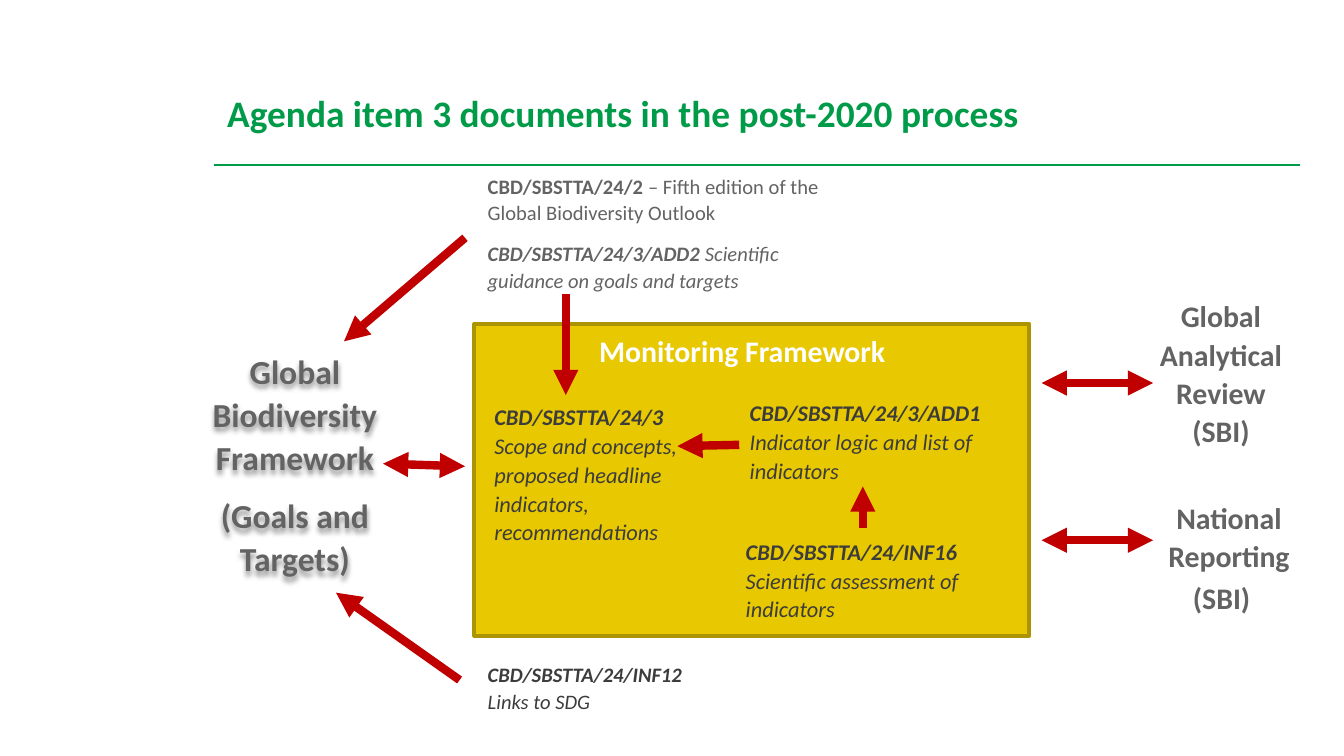
from lxml.etree import SubElement as Sub
from pptx import Presentation
from pptx.dml.color import RGBColor as Rgb
from pptx.enum.shapes import MSO_CONNECTOR as Conn, MSO_SHAPE as Shape
from pptx.enum.text import MSO_ANCHOR as Anchor, PP_ALIGN as Align
from pptx.oxml.ns import qn
from pptx.util import Inches, Pt

HUE = {
    "green": "009B48", "grey": "636363", "dark": "3C3C3C", "white": "FFFFFF",
    "gold": "E8C800", "edge": "AC9400", "red": "C00000", "black": "000000",
}
MID = Anchor.MIDDLE


def rgb(name):
    return Rgb.from_string(HUE[name])


def inch(*nums):
    return [Inches(n) for n in nums]


def shade(area):
    """Give the text of an unfilled box a soft drop shadow."""
    fx = Sub(area._element.spPr, qn("a:effectLst"))
    drop = Sub(fx, qn("a:outerShdw"), blurRad="38100", dist="25400",
               dir="5400000", algn="t", rotWithShape="0")
    tint = Sub(drop, qn("a:srgbClr"), val=HUE["black"])
    Sub(tint, qn("a:alpha"), val="43000")


def write(frame, paras, size=12, hue="dark", align=Align.LEFT, anchor=Anchor.TOP,
          after=0, lead=1.07):
    """Fill a frame; a paragraph is a list of (text, style), style using b and i."""
    frame.word_wrap = True
    frame.vertical_anchor = anchor
    for n, runs in enumerate(paras):
        para = frame.paragraphs[0] if n == 0 else frame.add_paragraph()
        para.alignment, para.line_spacing = align, lead
        para.space_before, para.space_after = Pt(0), Pt(after)
        for words, style in runs:
            run = para.add_run()
            run.text = words
            font = run.font
            font.name, font.size = "Calibri", Pt(size)
            font.bold, font.italic = "b" in style, "i" in style
            font.color.rgb = rgb(hue)


def label(slide, x, y, w, h, paras, **form):
    area = slide.shapes.add_textbox(*inch(x, y, w, h))
    write(area.text_frame, paras, **form)
    return area


def line(slide, start, end, hue="red", width=4.5, tips=("tailEnd",)):
    link = slide.shapes.add_connector(Conn.STRAIGHT, *inch(*start, *end))
    link.line.color.rgb, link.line.width = rgb(hue), Pt(width)
    for tip in tips:
        Sub(link.line._get_or_add_ln(), qn("a:" + tip), type="triangle")
    Sub(link._element.spPr, qn("a:effectLst"))


def both(slide, start, end):
    """Draw an arrow with a head at each end."""
    line(slide, start, end, tips=("headEnd", "tailEnd"))


def header(slide, x, y, w, h):
    title = slide.shapes.title
    title.left, title.top, title.width, title.height = inch(x, y, w, h)
    write(title.text_frame, [[("Agenda item 3 documents in the post-2020 process", "b")]],
          size=20, hue="green", anchor=MID, lead=1)
    line(slide, (x, y + 0.67), (x + 8.08, y + 0.67), "green", 1, ())


def goals(slide, x, y, w, h):
    shade(label(slide, x, y, w, h,
                [[("Global Biodiversity Framework", "b")], [("(Goals and Targets)", "b")]],
                size=18, hue="grey", align=Align.CENTER, anchor=MID, after=8))
    line(slide, (x + 1.98, y - 0.79), (x + 1.08, y - 0.02))
    line(slide, (x + 1.94, y + 2.5), (x + 1.02, y + 1.85))
    both(slide, (x + 1.37, y + 0.89), (x + 1.98, y + 0.91))


def papers(slide, x, y, w, h):
    """Place the documents above and below the framework."""
    label(slide, x, y, w, h, [
        [("CBD/SBSTTA/24/2", "b"),
         (" – Fifth edition of the Global Biodiversity Outlook", "")],
        [("CBD/SBSTTA/24/3/ADD2 ", "bi"),
         ("Scientific guidance on goals and targets", "i")],
    ], size=11, hue="grey", after=8)
    label(slide, x, y + 3.54, 1.72, 0.68,
          [[("CBD/SBSTTA/24/INF12 ", "bi"), ("Links to SDG", "i")]],
          size=11, anchor=MID, after=8)


def monitor(slide, x, y, w, h):
    panel = slide.shapes.add_shape(Shape.RECTANGLE, *inch(x, y, w, h))
    panel.shadow.inherit = False
    panel.fill.solid()
    panel.fill.fore_color.rgb = rgb("gold")
    panel.line.color.rgb, panel.line.width = rgb("edge"), Pt(2)
    panel.text_frame.margin_right = Inches(0.24)
    write(panel.text_frame, [[("Monitoring Framework", "b")]],
          size=16, hue="white", align=Align.CENTER)

    label(slide, x + 0.05, y + 0.53, 1.58, 1.15, [
        [("CBD/SBSTTA/24/3", "bi")],
        [("Scope and concepts, proposed headline indicators, recommendations", "i")],
    ])
    for dx, dy, wide, code, about in (
        (1.95, 0.53, 1.95, "CBD/SBSTTA/24/3/ADD1 ", "Indicator logic and list of indicators"),
        (1.92, 1.56, 1.98, "CBD/SBSTTA/24/INF16 ", "Scientific assessment of indicators"),
    ):
        label(slide, x + dx, y + dy, wide, 0.68,
              [[(code, "bi"), (about, "i")]], anchor=MID)

    line(slide, (x + 1.97, y + 0.9), (x + 1.51, y + 0.91))
    line(slide, (x + 2.89, y + 1.52), (x + 2.89, y + 1.21))
    line(slide, (x + 0.68, y - 0.22), (x + 0.68, y + 0.53))


def report(slide, x, y, w, h, name, level):
    """Place a report label and, at the given height, its arrow."""
    both(slide, (7.75, level), (8.58, level))
    return label(slide, x, y, w, h, [[(name, "b")], [("(SBI)", "b")]],
                 size=16, hue="grey", align=Align.CENTER)


def main():
    deck = Presentation()
    deck.slide_width = Inches(10)
    deck.slide_height = deck.slide_width * 9 // 16
    slide = deck.slides.add_slide(deck.slide_layouts[5])
    header(slide, 1.59, 0.56, 7.91, 0.56)
    goals(slide, 1.48, 2.56, 1.43, 1.77)
    papers(slide, 3.53, 1.23, 2.69, 0.91)
    monitor(slide, 3.53, 2.41, 4.13, 2.32)
    report(slide, 8.42, 2.15, 1.33, 1.24, "Global Analytical Review", 2.85)
    area = report(slide, 8.46, 3.65, 1.37, 0.99, "National Reporting", 4.02)
    last = area.text_frame.paragraphs[-1]
    last.space_before = Pt(2)
    last._p.get_or_add_pPr().set("marR", str(Inches(0.11)))
    deck.save("out.pptx")


if __name__ == "__main__":
    main()
